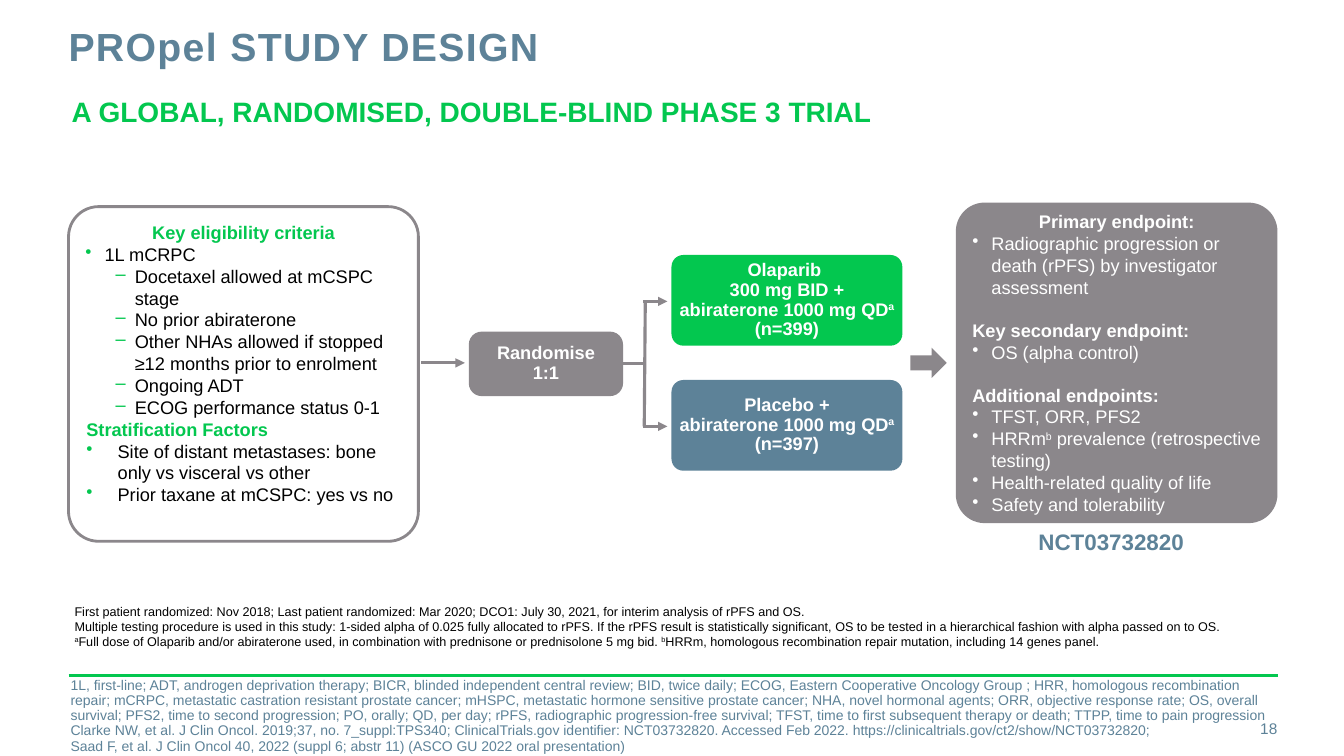
"""Build the PROpel study design slide."""
from dataclasses import dataclass

from lxml.etree import SubElement
from pptx import Presentation
from pptx.dml.color import RGBColor as RGB
from pptx.enum.shapes import MSO_CONNECTOR as CONN, MSO_SHAPE as SHAPE
from pptx.enum.text import MSO_ANCHOR as ANCHOR, PP_ALIGN as ALIGN
from pptx.oxml.ns import qn
from pptx.util import Pt

PX = 9144


@dataclass(frozen=True)
class Theme:
    font: str = "Arial"
    green: str = "03C74F"
    blue: str = "5D8298"
    grey: str = "8B878B"
    white: str = "FFFFFF"
    black: str = "000000"
    title: int = 28
    subtitle: int = 20
    trial_id: int = 16
    body: int = 13
    number: int = 11
    abbreviations: int = 10
    notes: int = 9


class Deck:
    def __init__(self, theme, width, height):
        self.theme = theme
        self.prs = Presentation()
        self.prs.slide_width, self.prs.slide_height = width * PX, height * PX
        self.slide = self.prs.slides.add_slide(self.prs.slide_layouts[6])

    def bullet(self, p, char, color, left, hang):
        pPr = p._p.get_or_add_pPr()
        pPr.set("marL", str(left * PX))
        pPr.set("indent", str(-hang * PX))
        if char:
            clr = SubElement(pPr, qn("a:buClr"))
            SubElement(clr, qn("a:srgbClr")).set("val", color)
            SubElement(pPr, qn("a:buChar")).set("char", char)

    def add_run(self, p, text, size, color, bold, raised, spacing):
        r = p.add_run()
        r.text = text
        font = {"name": self.theme.font, "size": Pt(size), "bold": bold}
        for name, value in font.items():
            setattr(r.font, name, value)
        r.font.color.rgb = RGB.from_string(color)
        rPr = r._r.get_or_add_rPr()
        if raised:
            rPr.set("baseline", "30000")
        if spacing:
            rPr.set("spc", str(spacing))

    def paragraph(self, p, text, size, color, bold=False, bullet=None, spacing=0, **fmt):
        if bullet:
            self.bullet(p, *bullet)
        for name, value in fmt.items():
            setattr(p, name, value)
        for i, part in enumerate(text.split("^")):
            for j, line in enumerate(part.split("\n")):
                if j:
                    p.add_line_break()
                if line:
                    self.add_run(p, line, size, color, bold, i % 2, spacing)

    def fill_text(self, sp, paragraphs, insets, anchor):
        tf = sp.text_frame
        sides = ("margin_left", "margin_top", "margin_right", "margin_bottom")
        frame = dict(zip(sides, (n * PX for n in insets)))
        frame.update(word_wrap=True, vertical_anchor=anchor)
        for name, value in frame.items():
            setattr(tf, name, value)
        for i, (text, style) in enumerate(paragraphs):
            p = tf.add_paragraph() if i else tf.paragraphs[0]
            self.paragraph(p, text, **style)

    def text(self, box, paragraphs, insets=(0, 0, 0, 0), anchor=ANCHOR.TOP):
        sp = self.slide.shapes.add_textbox(*(n * PX for n in box))
        self.fill_text(sp, paragraphs, insets, anchor)

    def shape(self, kind, box, fill, line=None):
        sp = self.slide.shapes.add_shape(kind, *(n * PX for n in box))
        sp.shadow.inherit = False
        sp.fill.solid()
        sp.fill.fore_color.rgb = RGB.from_string(fill)
        if line:
            sp.line.color.rgb = RGB.from_string(line)
            sp.line.width = Pt(2)
        else:
            sp.line.fill.background()
        return sp

    def card(self, box, radius, fill, paragraphs, insets=(0, 5, 0, 5), line=None):
        sp = self.shape(SHAPE.ROUNDED_RECTANGLE, box, fill, line)
        sp.adjustments[0] = radius
        self.fill_text(sp, paragraphs, insets, ANCHOR.MIDDLE)
        return sp

    def line(self, start, end, color, width=2.25, arrow=False, source=None):
        c = self.slide.shapes.add_connector(CONN.STRAIGHT, *(n * PX for n in start + end))
        if source:
            c.begin_connect(source, 3)
        c.line.color.rgb = RGB.from_string(color)
        c.line.width = Pt(width)
        spPr = c._element.spPr
        if arrow:
            SubElement(spPr.find(qn("a:ln")), qn("a:tailEnd")).set("type", "triangle")
        SubElement(spPr, qn("a:effectLst"))


def main():
    t = Theme()
    deck = Deck(t, 1333, 750)

    title = dict(size=t.title, color=t.blue, bold=True, spacing=100, line_spacing=Pt(30))
    subtitle = dict(size=t.subtitle, color=t.green, bold=True)
    small = dict(size=t.abbreviations, color=t.blue, line_spacing=0.9)
    number = dict(size=t.number, color=t.blue, alignment=ALIGN.RIGHT)
    trial_id = dict(size=t.trial_id, color=t.blue, bold=True)
    note = dict(size=t.notes, color=t.black)
    arm = dict(size=t.body, color=t.white, bold=True, alignment=ALIGN.CENTER, line_spacing=0.9)
    criteria = dict(size=t.body, color=t.green, bold=True)
    factors = dict(criteria, bullet=("", t.green, 1, 0))
    item = dict(size=t.body, color=t.black, bullet=("•", t.green, 19, 19))
    subitem = dict(item, bullet=("–", t.green, 49, 19), level=1)
    factor = dict(item, bullet=("•", t.green, 32, 31))
    endpoint = dict(size=t.body, color=t.white, bold=True)
    next_endpoint = dict(endpoint, space_before=Pt(15))
    measure = dict(size=t.body, color=t.white, bullet=("•", t.white, 19, 19))

    deck.line((68, 670), (1268, 670), t.green, width=2)
    deck.text((68, 27, 956, 88), [("PROpel STUDY DESIGN", title)])
    deck.text((71, 94, 1200, 77), [("A GLOBAL, RANDOMISED, DOUBLE-BLIND PHASE 3 TRIAL", subtitle)])
    deck.text((70, 673, 1199, 77), [
        ("1L, first-line; ADT, androgen deprivation therapy; BICR, blinded independent central review; "
         "BID, twice daily; ECOG, Eastern Cooperative Oncology Group ; HRR, homologous recombination "
         "repair; mCRPC, metastatic castration resistant prostate cancer; mHSPC, metastatic hormone "
         "sensitive prostate cancer; NHA, novel hormonal agents; ORR, objective response rate; OS, "
         "overall survival; PFS2, time to second progression; PO, orally; QD, per day; rPFS, "
         "radiographic progression-free survival; TFST, time to first subsequent therapy or death; "
         "TTPP, time to pain progression", small),
        ("Clarke NW, et al. J Clin Oncol. 2019;37, no. 7_suppl:TPS340; ClinicalTrials.gov identifier: "
         "NCT03732820. Accessed Feb 2022. https://clinicaltrials.gov/ct2/show/NCT03732820; \n"
         "Saad F, et al. J Clin Oncol 40, 2022 (suppl 6; abstr 11) (ASCO GU 2022 oral presentation)",
         small),
    ])
    deck.text((1181, 703, 86, 40), [("18", number)], anchor=ANCHOR.MIDDLE)
    deck.text((1030, 519, 156, 37), [("NCT03732820", trial_id)], (0, 5, 0, 5))

    deck.card((68, 205, 347, 332), 0.09, t.white, [
        ("Key eligibility criteria", criteria),
        ("1L mCRPC", item),
        ("Docetaxel allowed at mCSPC stage", subitem),
        ("No prior abiraterone", subitem),
        ("Other NHAs allowed if stopped \n≥12 months prior to enrolment", subitem),
        ("Ongoing ADT", subitem),
        ("ECOG performance status 0-1", subitem),
        ("Stratification Factors", factors),
        ("Site of distant metastases: bone only vs visceral vs other", factor),
        ("Prior taxane at mCSPC: yes vs no", factor),
    ], insets=(8, 5, 8, 26), line=t.grey)

    randomise = deck.card((465, 329, 153, 64), 0.2, t.grey, [("Randomise", arm), ("1:1", arm)])
    deck.line((418, 360), (461, 360), t.grey, arrow=True)
    deck.line((618, 361), (639, 361), t.grey, source=randomise)
    deck.line((639, 423), (640, 298), t.grey)

    arms = [
        (253, t.green, "Olaparib \n300 mg BID +\nabiraterone 1000 mg QD^a^\n(n=399)"),
        (377, t.blue, "Placebo +\nabiraterone 1000 mg QD^a^\n(n=397)"),
    ]
    for top, color, treatment in arms:
        deck.card((666, top, 229, 90), 0.13, color, [(treatment, arm)])
        deck.line((638, top + 46), (662, top + 46), t.grey, arrow=True)

    deck.shape(SHAPE.RIGHT_ARROW, (903, 345, 36, 30), t.grey)
    deck.card((948, 201, 319, 318), 0.09, t.grey, [
        ("Primary endpoint:", endpoint),
        ("Radiographic progression or death (rPFS) by investigator assessment", measure),
        ("Key secondary endpoint:", next_endpoint),
        ("OS (alpha control)", measure),
        ("Additional endpoints:", next_endpoint),
        ("TFST, ORR, PFS2", measure),
        ("HRRm^b^ prevalence (retrospective testing)", measure),
        ("Health-related quality of life", measure),
        ("Safety and tolerability", measure),
    ], insets=(8, 5, 8, 5))

    deck.text((68, 596, 1246, 60), [
        ("First patient randomized: Nov 2018; Last patient randomized: Mar 2020; DCO1: July 30, 2021, "
         "for interim analysis of rPFS and OS.", note),
        ("Multiple testing procedure is used in this study: 1-sided alpha of 0.025 fully allocated to "
         "rPFS. If the rPFS result is statistically significant, OS to be tested in a hierarchical "
         "fashion with alpha passed on to OS. \n^a^Full dose of Olaparib and/or abiraterone used, in "
         "combination with prednisone or prednisolone 5 mg bid. ^b^HRRm, homologous recombination "
         "repair mutation, including 14 genes panel.", note),
    ], (6, 3, 6, 3))

    deck.prs.save("out.pptx")


if __name__ == "__main__":
    main()
